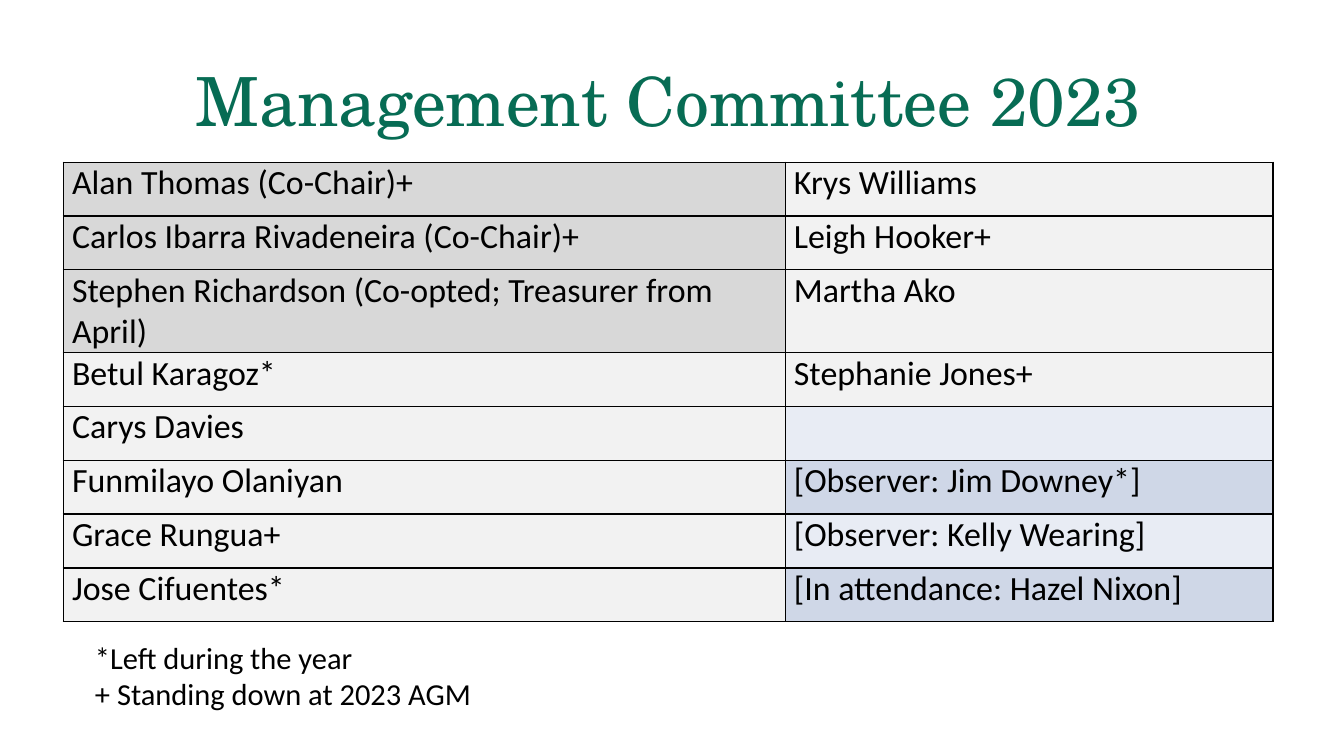
from dataclasses import dataclass

from lxml import etree
from pptx import Presentation
from pptx import util as u
from pptx.dml.color import RGBColor
from pptx.enum import text
from pptx.oxml import ns


@dataclass(frozen=True)
class Theme:
    heading_font: str = "TeX Gyre Schola"
    body_font: str = "Calibri"
    heading_size: int = 40
    member_size: int = 20
    note_size: int = 18
    heading: str = "076C54"
    ink: str = "000000"
    officer: str = "D8D8D8"
    member: str = "F2F2F2"
    vacant: str = "E8ECF4"
    observer: str = "CFD7E7"


class CommitteeSlide:
    """Holds the theme and the current slide, and draws each kind of element."""

    def __init__(self, deck, theme):
        self.theme = theme
        self.slide = deck.slides.add_slide(deck.slide_layouts[5])

    def style(self, frame, font, size, color):
        for paragraph in frame.paragraphs:
            for run in paragraph.runs:
                run.font.name = font
                run.font.size = u.Pt(size)
                run.font.color.rgb = RGBColor.from_string(color)

    def title(self, wording, left, top, width, height):
        heading = self.slide.shapes.title
        heading.left, heading.top = u.Cm(left), u.Cm(top)
        heading.width, heading.height = u.Cm(width), u.Cm(height)
        frame = heading.text_frame
        frame.text = wording
        frame.vertical_anchor = text.MSO_ANCHOR.MIDDLE
        frame.margin_left = frame.margin_right = frame.margin_top = frame.margin_bottom = 0
        frame.paragraphs[0].alignment = text.PP_ALIGN.CENTER
        self.style(frame, self.theme.heading_font, self.theme.heading_size, self.theme.heading)

    def border(self, cell):
        properties = cell._tc.get_or_add_tcPr()
        for side in ("a:lnL", "a:lnR", "a:lnT", "a:lnB"):
            line = etree.SubElement(properties, ns.qn(side), w=str(u.Pt(1)))
            fill = etree.SubElement(line, ns.qn("a:solidFill"))
            etree.SubElement(fill, ns.qn("a:srgbClr"), val=self.theme.ink)

    def table(self, rows, left, top, widths, row_height):
        members = self.slide.shapes.add_table(
            len(rows), len(widths), u.Cm(left), u.Cm(top),
            u.Cm(sum(widths)), u.Cm(row_height * len(rows))).table
        members.first_row = members.horz_banding = False
        for column, width in zip(members.columns, widths):
            column.width = u.Cm(width)
        for row, entries in enumerate(rows):
            members.rows[row].height = u.Cm(row_height)
            for column, (name, color) in enumerate(entries):
                self.cell(members.cell(row, column), name, color)

    def cell(self, cell, name, color):
        cell.text = name
        cell.margin_left = cell.margin_right = u.Cm(0.18)
        cell.margin_top = cell.margin_bottom = 0
        self.border(cell)
        cell.fill.solid()
        cell.fill.fore_color.rgb = RGBColor.from_string(color)
        self.style(cell.text_frame, self.theme.body_font, self.theme.member_size, self.theme.ink)

    def note(self, wording, left, top, width, height):
        frame = self.slide.shapes.add_textbox(
            u.Cm(left), u.Cm(top), u.Cm(width), u.Cm(height)).text_frame
        frame.word_wrap = True
        frame.text = wording
        self.style(frame, self.theme.body_font, self.theme.note_size, self.theme.ink)


def main():
    theme = Theme()
    deck = Presentation()
    deck.slide_width, deck.slide_height = u.Cm(28), u.Cm(15.75)
    committee = CommitteeSlide(deck, theme)

    left_members = [
        ("Alan Thomas (Co-Chair)+", theme.officer),
        ("Carlos Ibarra Rivadeneira (Co-Chair)+", theme.officer),
        ("Stephen Richardson (Co-opted; Treasurer from April)", theme.officer),
        ("Betul Karagoz*", theme.member),
        ("Carys Davies", theme.member),
        ("Funmilayo Olaniyan", theme.member),
        ("Grace Rungua+", theme.member),
        ("Jose Cifuentes*", theme.member),
    ]
    right_members = [
        ("Krys Williams", theme.member),
        ("Leigh Hooker+", theme.member),
        ("Martha Ako", theme.member),
        ("Stephanie Jones+", theme.member),
        ("", theme.vacant),
        ("[Observer: Jim Downey*]", theme.observer),
        ("[Observer: Kelly Wearing]", theme.vacant),
        ("[In attendance: Hazel Nixon]", theme.observer),
    ]

    committee.title("Management Committee 2023", 1.32, 0.76, 25.2, 2.62)
    committee.table(list(zip(left_members, right_members)), 1.32, 3.38, (15.04, 10.16), 1.12)
    committee.note("*Left during the year\n+ Standing down at 2023 AGM", 1.73, 13.18, 11.15, 2.57)
    deck.save("out.pptx")


if __name__ == "__main__":
    main()
